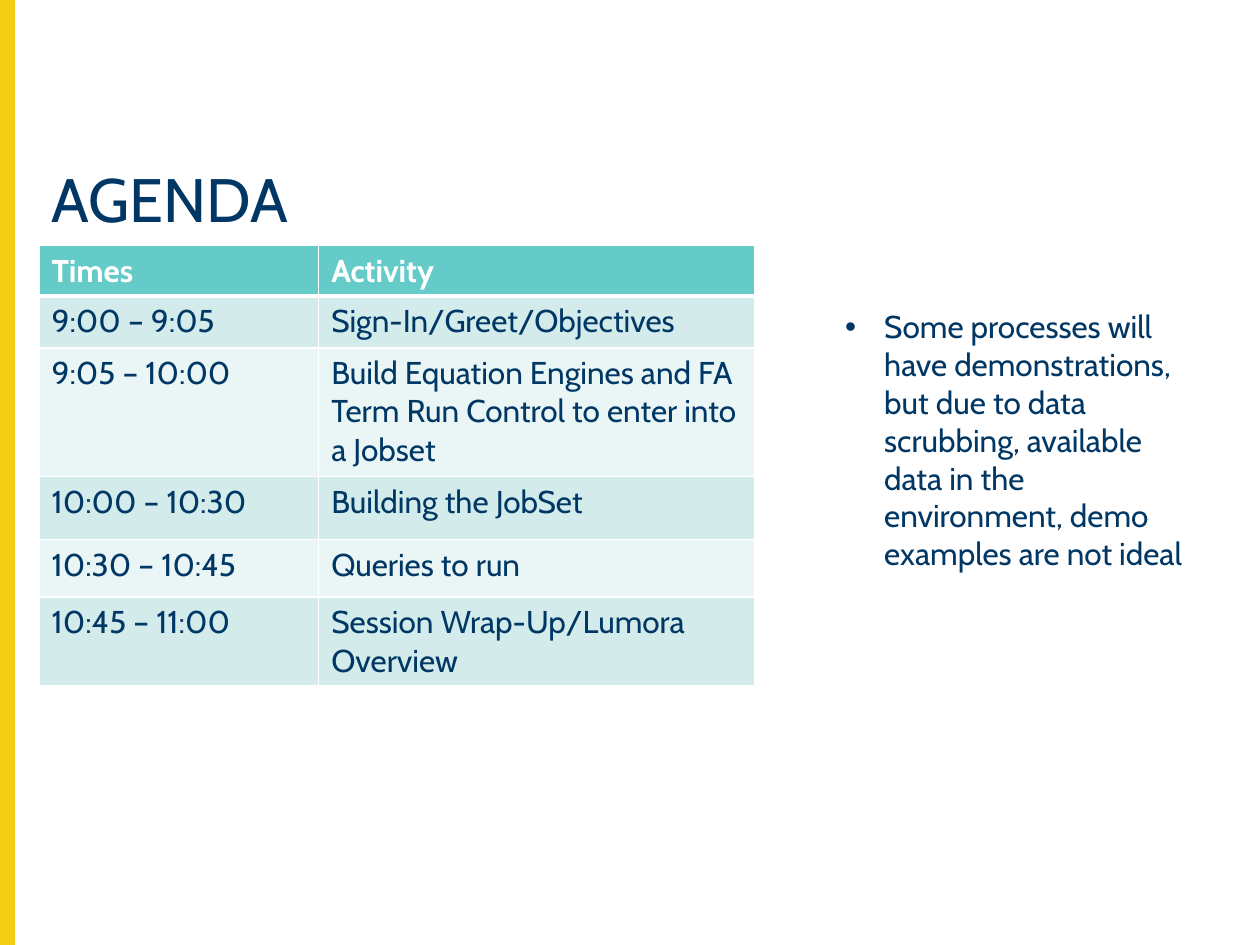
from lxml import etree
from pptx import Presentation
from pptx.dml.color import RGBColor
from pptx.enum import shapes, text
from pptx.oxml.ns import qn
from pptx.util import Inches, Pt

FONT = "Cabin"
NAVY = RGBColor(0x00, 0x37, 0x64)
GOLD = RGBColor(0xF4, 0xCE, 0x12)
TEAL = RGBColor(0x65, 0xCB, 0xC9)
MIST = RGBColor(0xD3, 0xEC, 0xEB)
PALE = RGBColor(0xEA, 0xF6, 0xF5)
WHITE = RGBColor(0xFF, 0xFF, 0xFF)

AGENDA = [
    ("Times", "Activity"),
    ("9:00 – 9:05", "Sign-In/Greet/Objectives"),
    ("9:05 – 10:00", "Build Equation Engines and FA Term Run Control to enter into a Jobset"),
    ("10:00 – 10:30", "Building the JobSet"),
    ("10:30 – 10:45", "Queries to run"),
    ("10:45 – 11:00", "Session Wrap-Up/Lumora Overview"),
]
COLS = [2.22, 3.46]
ROWS = [0.4, 0.41, 1.02, 0.5, 0.46, 0.7]
NOTE = ("Some processes will have demonstrations, but due to data scrubbing, "
        "available data in the environment, demo examples are not ideal")


def style(para, size, color, bold=False):
    font = para.font
    font.name, font.size, font.bold = FONT, Pt(size), bold
    font.color.rgb = color


def add_bar(slide):
    bar = slide.shapes.add_shape(
        shapes.MSO_SHAPE.RECTANGLE, 0, 0, Inches(0.11), Inches(7.5))
    bar.shadow.inherit = False
    bar.fill.solid()
    bar.fill.fore_color.rgb = GOLD
    bar.line.color.rgb = GOLD
    bar.line.width = Pt(1)


def add_text(slide, words, box, size):
    frame = slide.shapes.add_textbox(*map(Inches, box)).text_frame
    frame.word_wrap = True
    frame.vertical_anchor = text.MSO_ANCHOR.TOP
    para = frame.paragraphs[0]
    para.text = words
    style(para, size, NAVY)
    return para


def add_bullet(para, indent):
    props = para._p.get_or_add_pPr()
    props.set("marL", str(Inches(indent)))
    props.set("indent", str(-Inches(indent)))
    etree.SubElement(props, qn("a:buFont")).set("typeface", "Arial")
    etree.SubElement(props, qn("a:buChar")).set("char", "•")


def set_edges(cell, widths):
    props = cell._tc.get_or_add_tcPr()
    for side, width in widths.items():
        line = etree.SubElement(props, qn(f"a:ln{side}"), w=str(Pt(width)))
        fill = etree.SubElement(line, qn("a:solidFill"))
        etree.SubElement(fill, qn("a:srgbClr"), val=str(WHITE))


def fill_cell(cell, words, row):
    head = row == 0
    # Borders precede the fill in the cell properties
    set_edges(cell, {"L": 1, "R": 1, "T": 3 if row == 1 else 1, "B": 3 if head else 1})
    cell.fill.solid()
    cell.fill.fore_color.rgb = TEAL if head else MIST if row % 2 else PALE
    cell.text = words
    style(cell.text_frame.paragraphs[0], 18, WHITE if head else NAVY, head)


def add_grid(slide):
    box = map(Inches, (0.31, 1.95, sum(COLS), sum(ROWS)))
    table = slide.shapes.add_table(len(ROWS), len(COLS), *box).table
    for col, width in zip(table.columns, COLS):
        col.width = Inches(width)
    for r, height in enumerate(ROWS):
        table.rows[r].height = Inches(height)
        for c, words in enumerate(AGENDA[r]):
            fill_cell(table.cell(r, c), words, r)


def main():
    deck = Presentation()
    deck.slide_width, deck.slide_height = Inches(10), Inches(7.5)
    slide = deck.slides.add_slide(deck.slide_layouts[6])

    # Side bar and title
    add_bar(slide)
    title = add_text(slide, "AGENDA", (0.31, 1.3, 9.33, 0.79), 35)
    title.line_spacing = 0.9

    # Schedule and side note
    add_grid(slide)
    note = add_text(slide, NOTE, (6.61, 2.39, 3.04, 2.22), 18)
    add_bullet(note, 0.31)

    deck.save("out.pptx")


if __name__ == "__main__":
    main()
